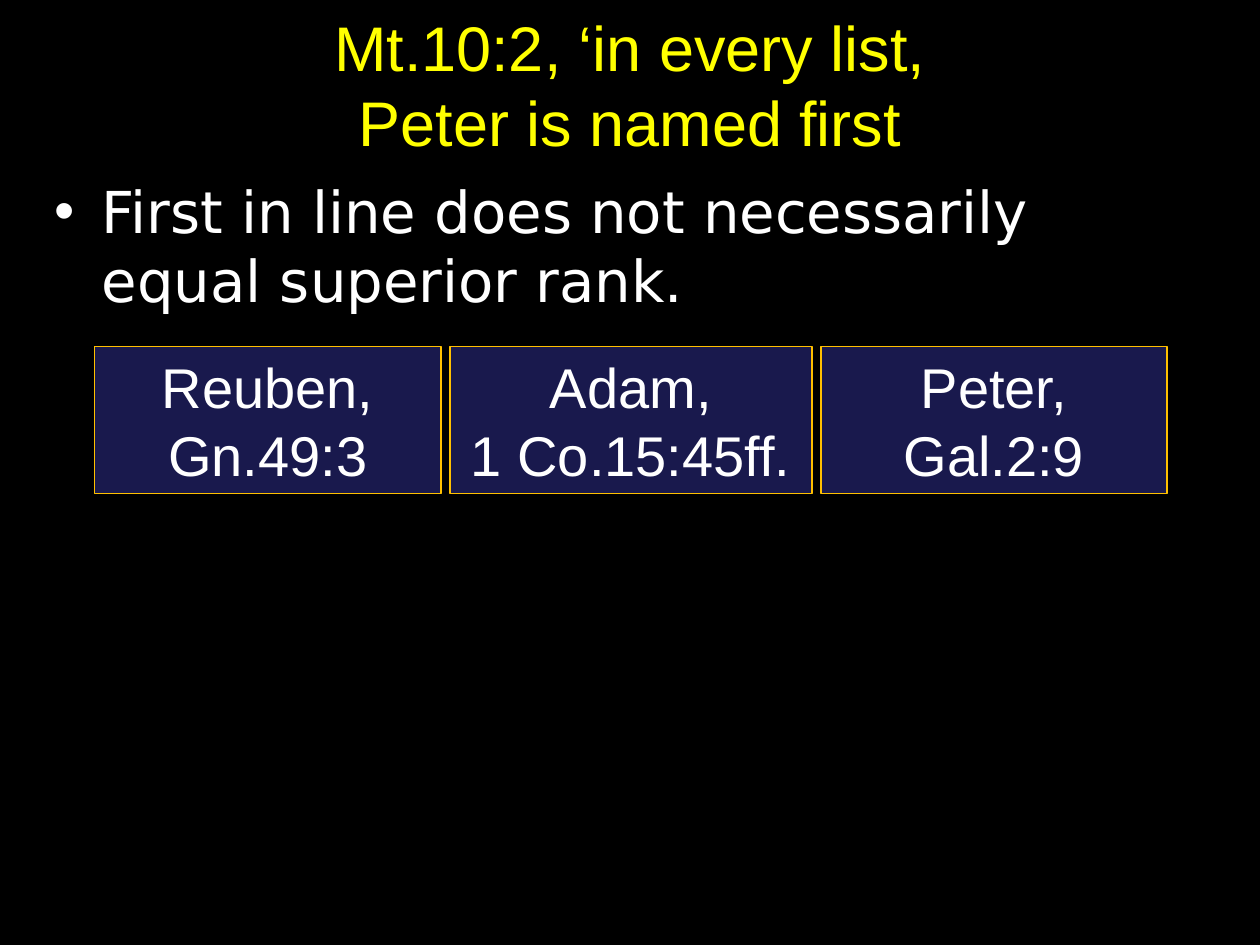
import copy

import pptx
import pptx.dml.color
import pptx.enum.shapes
import pptx.enum.text
import pptx.oxml
import pptx.oxml.ns
import pptx.util

Pt = pptx.util.Pt
RGB = pptx.dml.color.RGBColor
ALIGN = pptx.enum.text.PP_ALIGN
ANCHOR = pptx.enum.text.MSO_ANCHOR

BLACK = RGB(0x00, 0x00, 0x00)
WHITE = RGB(0xFF, 0xFF, 0xFF)
YELLOW = RGB(0xFF, 0xFF, 0x00)
NAVY = RGB(0x19, 0x19, 0x4D)
GOLD = RGB(0xFF, 0xC0, 0x00)

EXAMPLES = [
    (198, ["Reuben,", "Gn.49:3"]),
    (207, ["Adam,", "1 Co.15:45ff."]),
    (198, ["Peter,", "Gal.2:9"]),
]


def write_text(tf, lines, size, color=WHITE, font="Arial", align=ALIGN.CENTER,
               anchor=ANCHOR.MIDDLE):
    """Fill a frame with one paragraph per line; a vertical tab breaks a line."""
    tf.word_wrap = True
    tf.auto_size = pptx.enum.text.MSO_AUTO_SIZE.NONE
    tf.vertical_anchor = anchor
    tf.text = "\n".join(lines)
    for p in tf.paragraphs:
        p.alignment = align
        for r in p.runs:
            r.font.size = Pt(size)
            r.font.name = font
            r.font.color.rgb = color
        # A line break takes the size of the text around it
        for br in p._p.findall(pptx.oxml.ns.qn("a:br")):
            br.append(copy.deepcopy(p.runs[0]._r.rPr))


def add_bullet(p, indent):
    pPr = p._p.get_or_add_pPr()
    pPr.set("marL", str(Pt(indent)))
    pPr.set("indent", str(-Pt(indent)))
    ns = pptx.oxml.ns.nsdecls("a")
    pPr.append(pptx.oxml.parse_xml(f'<a:buFont {ns} typeface="Arial"/>'))
    pPr.append(pptx.oxml.parse_xml(f'<a:buChar {ns} char="•"/>'))


def place_title(s, left, top, width, height):
    sp = s.shapes.title
    sp.left, sp.top, sp.width, sp.height = map(Pt, (left, top, width, height))
    write_text(sp.text_frame, ["Mt.10:2, ‘in every list,\vPeter is named first"],
               36, color=YELLOW)


def add_body(s, left, top, width, height):
    sp = s.shapes.add_textbox(*map(Pt, (left, top, width, height)))
    write_text(sp.text_frame,
               ["First in line does not necessarily equal superior rank."],
               33, font="DejaVu Sans", align=ALIGN.LEFT, anchor=ANCHOR.TOP)
    add_bullet(sp.text_frame.paragraphs[0], 27)


def add_examples(s, left, top, width, height):
    """Lay the boxes in a row with equal gaps that fill the width."""
    gap = (width - sum(w for w, _ in EXAMPLES)) / (len(EXAMPLES) - 1)
    for box_width, lines in EXAMPLES:
        sp = s.shapes.add_shape(pptx.enum.shapes.MSO_SHAPE.RECTANGLE,
                                *map(Pt, (left, top, box_width, height)))
        sp.shadow.inherit = False
        sp.fill.solid()
        sp.fill.fore_color.rgb = NAVY
        sp.line.color.rgb = GOLD
        sp.line.width = Pt(1)
        write_text(sp.text_frame, lines, 32)
        left += box_width + gap


def main():
    prs = pptx.Presentation()
    prs.slide_width, prs.slide_height = Pt(720), Pt(540)
    s = prs.slides.add_slide(prs.slide_layouts[5])
    s.background.fill.solid()
    s.background.fill.fore_color.rgb = BLACK
    place_title(s, 36, 0, 648, 96)
    add_body(s, 24, 97, 672, 366)
    add_examples(s, 54, 198, 613, 84)
    prs.save("out.pptx")


if __name__ == "__main__":
    main()
